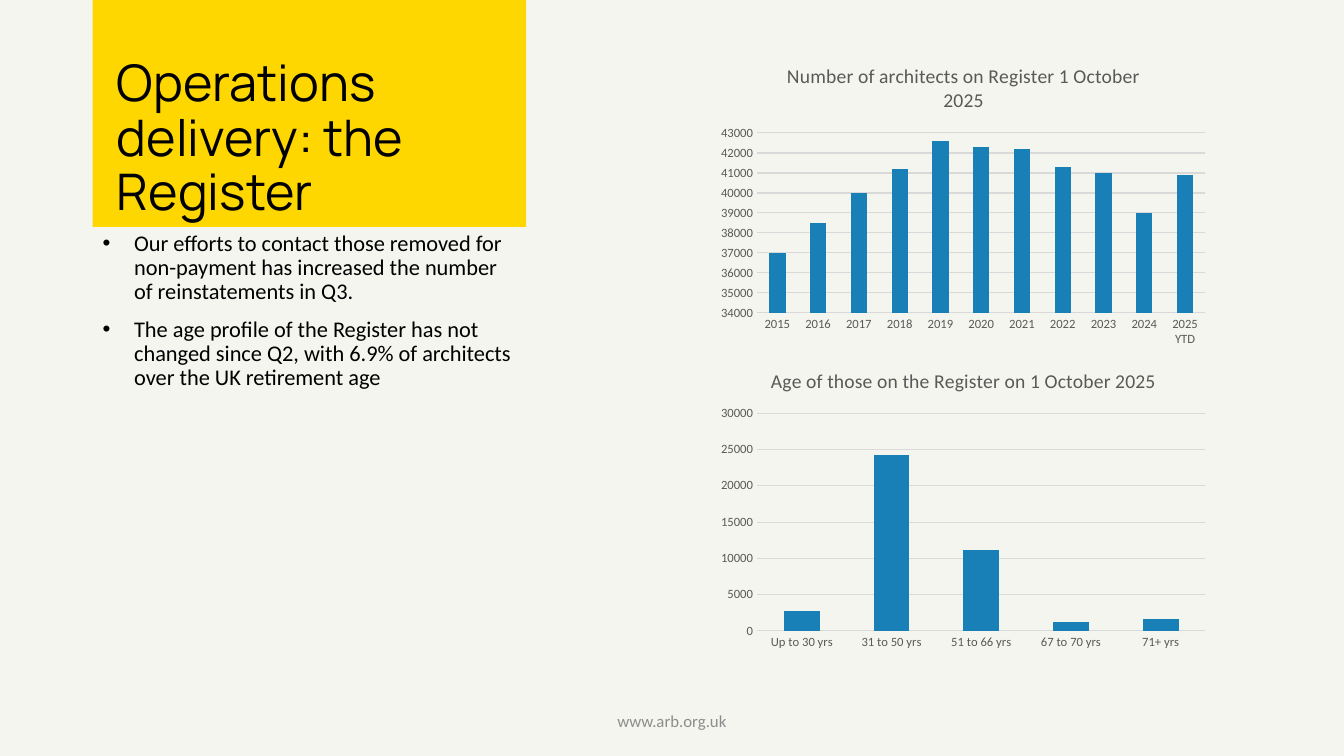
from lxml.etree import SubElement
from pptx import Presentation
from pptx.chart.data import CategoryChartData
from pptx.dml.color import RGBColor
from pptx.enum.chart import XL_CHART_TYPE as ChartType, XL_TICK_MARK as TickMark
from pptx.enum.text import MSO_ANCHOR as Anchor, MSO_AUTO_SIZE as AutoSize, PP_ALIGN as Align
from pptx.oxml.ns import qn
from pptx.util import Pt

PAPER = RGBColor(0xF5, 0xF5, 0xEF)
YELLOW = RGBColor(0xFF, 0xD7, 0x00)
BLACK = RGBColor(0x00, 0x00, 0x00)
GREY = RGBColor(0x59, 0x59, 0x59)
FOOTER_GREY = RGBColor(0x8C, 0x8C, 0x8C)
GRID = RGBColor(0xD9, 0xD9, 0xD9)
BLUE = RGBColor(0x19, 0x80, 0xB7)

LEFT, COLUMN_WIDTH, TITLE_HEIGHT = 66.24, 309.6, 162
CHART_LEFT, CHART_WIDTH = 508.3, 360

REGISTER = {
    "2015": 37000, "2016": 38500, "2017": 40000, "2018": 41200,
    "2019": 42600, "2020": 42300, "2021": 42200, "2022": 41300,
    "2023": 41000, "2024": 39000, "2025 YTD": 40900,
}
AGES = {
    "Up to 30 yrs": 2800, "31 to 50 yrs": 24200, "51 to 66 yrs": 11100,
    "67 to 70 yrs": 1200, "71+ yrs": 1600,
}
POINTS = [
    "Our efforts to contact those removed for non-payment has increased "
    "the number of reinstatements in Q3.",
    "The age profile of the Register has not changed since Q2, with 6.9% "
    "of architects over the UK retirement age",
]


def set_font(font, size, color, name="Calibri"):
    font.name, font.size, font.bold = name, Pt(size), False
    font.color.rgb = color


def write(para, text, size=16, color=BLACK, font="Calibri", align=Align.LEFT,
          spacing=None, before=0, bullet_indent=0):
    para.alignment = align
    para.line_spacing = spacing
    para.space_before = Pt(before)
    if bullet_indent:
        properties = para._p.get_or_add_pPr()
        properties.set("marL", str(Pt(bullet_indent)))
        properties.set("indent", str(-Pt(bullet_indent)))
        SubElement(properties, qn("a:buFont"), typeface="Arial")
        SubElement(properties, qn("a:buChar"), char="•")
    span = para.add_run()
    span.text = text
    set_font(span.font, size, color, font)


def place_plot(chart, **fractions):
    """Fix the inner plot area as fractions of the chart."""
    plot_area = chart._chartSpace.chart.plotArea
    for old in plot_area.findall(qn("c:layout")):
        plot_area.remove(old)
    layout = SubElement(plot_area, qn("c:layout"))
    plot_area.insert(0, layout)
    manual = SubElement(layout, qn("c:manualLayout"))
    settings = {"layoutTarget": "inner", "xMode": "edge", "yMode": "edge", **fractions}
    for tag, value in settings.items():
        SubElement(manual, qn("c:" + tag), val=str(value))


class RegisterSlide:
    def __init__(self, deck):
        self.page = deck.slides.add_slide(deck.slide_layouts[5])
        self.page.background.fill.solid()
        self.page.background.fill.fore_color.rgb = PAPER

    def title(self, text):
        box = self.page.shapes.title
        box.left, box.top = Pt(LEFT), Pt(0)
        box.width, box.height = Pt(COLUMN_WIDTH), Pt(TITLE_HEIGHT)
        box.fill.solid()
        box.fill.fore_color.rgb = YELLOW
        frame = box.text_frame
        frame.word_wrap, frame.auto_size = True, AutoSize.NONE
        frame.vertical_anchor = Anchor.BOTTOM
        frame.margin_left = Pt(17.28)
        write(frame.paragraphs[0], text, size=36, font="Manrope", spacing=0.9)

    def text(self, left, top, width, height, lines, anchor=Anchor.TOP, gap=0, **style):
        box = self.page.shapes.add_textbox(Pt(left), Pt(top), Pt(width), Pt(height))
        frame = box.text_frame
        frame.word_wrap, frame.vertical_anchor = True, anchor
        for index, line in enumerate(lines):
            para = frame.add_paragraph() if index else frame.paragraphs[0]
            write(para, line, before=gap if index else 0, **style)

    def column_chart(self, top, height, title, values, low, high, step, plot_top, plot_height):
        data = CategoryChartData()
        data.categories = list(values)
        data.add_series("Series 1", list(values.values()))
        chart = self.page.shapes.add_chart(
            ChartType.COLUMN_STACKED, Pt(CHART_LEFT), Pt(top),
            Pt(CHART_WIDTH), Pt(height), data).chart
        set_font(chart.font, 10, BLACK)
        chart.has_legend = False
        chart.has_title = True
        write(chart.chart_title.text_frame.paragraphs[0], title,
              size=14, color=GREY, align=Align.CENTER)
        chart.chart_title.include_in_layout = False

        plot = chart.plots[0]
        plot.gap_width, plot.overlap, plot.vary_by_categories = 150, 100, False
        fill = plot.series[0].format.fill
        fill.solid()
        fill.fore_color.rgb = BLUE

        years, amounts = chart.category_axis, chart.value_axis
        for axis in (years, amounts):
            axis.major_tick_mark = axis.minor_tick_mark = TickMark.NONE
            set_font(axis.tick_labels.font, 9, GREY)
        amounts.minimum_scale, amounts.maximum_scale = low, high
        amounts.major_unit = step
        amounts.has_major_gridlines = True
        amounts.format.line.fill.background()
        for line in (years.format.line, amounts.major_gridlines.format.line):
            line.color.rgb = GRID
            line.width = Pt(0.75)
        place_plot(chart, x=0.09, y=plot_top, w=0.89, h=plot_height)


def main():
    deck = Presentation()
    deck.slide_width, deck.slide_height = Pt(960), Pt(540)
    slide = RegisterSlide(deck)
    slide.title("Operations delivery: the Register")
    slide.text(LEFT, TITLE_HEIGHT, COLUMN_WIDTH, 300, POINTS,
               gap=10, spacing=0.9, bullet_indent=22.5)
    slide.text(318, 500.5, 324, 28.75, ["www.arb.org.uk"], anchor=Anchor.MIDDLE,
               size=12, color=FOOTER_GREY, align=Align.CENTER)
    slide.column_chart(34, 218, "Number of architects on Register 1 October 2025",
                       REGISTER, 34000, 43000, 1000, 0.28, 0.59)
    slide.column_chart(252, 216, "Age of those on the Register on 1 October 2025",
                       AGES, 0, 30000, 5000, 0.2, 0.72)
    deck.save("out.pptx")


if __name__ == "__main__":
    main()
